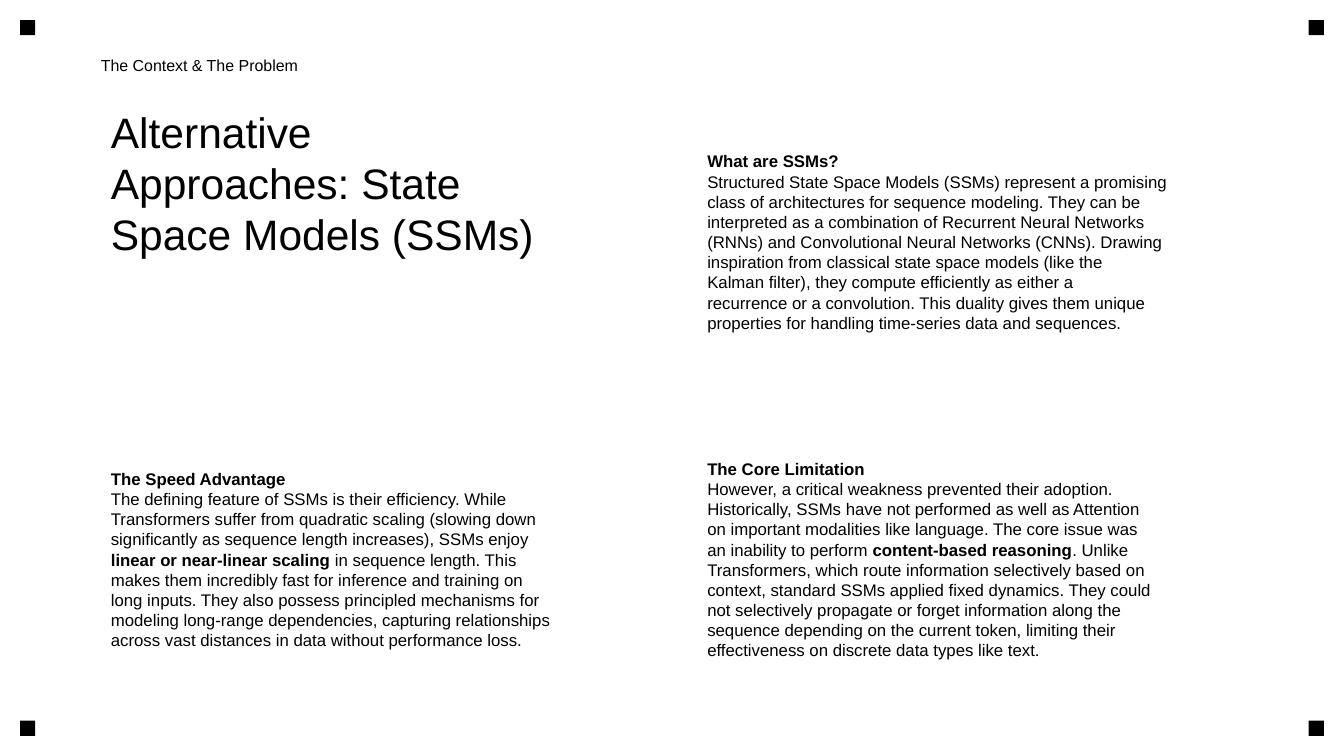
from dataclasses import dataclass
from itertools import product

import pptx
import pptx.dml.color
import pptx.enum.shapes
import pptx.enum.text
import pptx.util
from lxml import etree

Pt = pptx.util.Pt
Anchor = pptx.enum.text.MSO_ANCHOR


@dataclass(frozen=True)
class Theme:
    ink: str = "000000"
    paper: str = "FFFFFF"
    face: str = "Arial"
    title: float = 30.4
    body: float = 12
    label: float = 11.4
    lead: float = 1.2  # line pitch as a multiple of type size


@dataclass(frozen=True)
class Block:
    slot: int  # placeholder index
    col: int
    row: int
    head: str
    text: str  # asterisks surround bold words


THEME = Theme()
INK = pptx.dml.color.RGBColor.from_string(THEME.ink)

# Page and grid, in points
WIDE, HIGH = 960, 540
EDGE, MARK = 14.4, 10.8
LEFT, TOP = 72, 72
CELL_W, CELL_H = 390, 205.2
STEP_X, STEP_Y = 426, 226.8
INSETS = (7.2, 3.6, 3.6, 7.2)

LABEL = "The Context & The Problem"
TITLE = "Alternative\nApproaches: State\nSpace Models (SSMs)"
BLOCKS = [
    Block(2, 1, 0, "What are SSMs?", """\
Structured State Space Models (SSMs) represent a promising
class of architectures for sequence modeling. They can be
interpreted as a combination of Recurrent Neural Networks
(RNNs) and Convolutional Neural Networks (CNNs). Drawing
inspiration from classical state space models (like the
Kalman filter), they compute efficiently as either a
recurrence or a convolution. This duality gives them unique
properties for handling time-series data and sequences."""),
    Block(3, 0, 1, "The Speed Advantage", """\
The defining feature of SSMs is their efficiency. While
Transformers suffer from quadratic scaling (slowing down
significantly as sequence length increases), SSMs enjoy
*linear or near-linear scaling* in sequence length. This
makes them incredibly fast for inference and training on
long inputs. They also possess principled mechanisms for
modeling long-range dependencies, capturing relationships
across vast distances in data without performance loss."""),
    Block(4, 1, 1, "The Core Limitation", """\
However, a critical weakness prevented their adoption.
Historically, SSMs have not performed as well as Attention
on important modalities like language. The core issue was
an inability to perform *content-based reasoning*. Unlike
Transformers, which route information selectively based on
context, standard SSMs applied fixed dynamics. They could
not selectively propagate or forget information along the
sequence depending on the current token, limiting their
effectiveness on discrete data types like text."""),
]


def place(shape, box: tuple, insets: tuple, anchor):
    """Set a placeholder's box and return its text frame."""
    shape.left, shape.top, shape.width, shape.height = map(Pt, box)
    frame = shape.text_frame
    frame.word_wrap = True
    frame.auto_size = pptx.enum.text.MSO_AUTO_SIZE.NONE
    frame.vertical_anchor = anchor
    (frame.margin_left, frame.margin_top,
     frame.margin_right, frame.margin_bottom) = map(Pt, insets)
    return frame


def write(para, text: str, size: float, bold: bool = False) -> None:
    """Fill a plain paragraph, keeping line breaks and bold words."""
    props = para._p.get_or_add_pPr()
    props.set("marL", "0")
    props.set("indent", "0")
    etree.SubElement(props, pptx.oxml.ns.qn("a:buNone"))
    para.alignment = pptx.enum.text.PP_ALIGN.LEFT
    para.space_before = para.space_after = Pt(0)
    para.line_spacing = Pt(size * THEME.lead)
    font = para.font
    font.name, font.size, font.bold = THEME.face, Pt(size), bold
    font.color.rgb = INK
    for row, line in enumerate(text.split("\n")):
        if row:
            para.add_line_break()
        for part, words in enumerate(line.split("*")):
            if words:
                run = para.add_run()
                run.text = words
                if part % 2:
                    run.font.bold = True


def cell(col: int, row: int) -> tuple:
    return LEFT + col * STEP_X, TOP + row * STEP_Y, CELL_W, CELL_H


def main() -> None:
    deck = pptx.Presentation()
    deck.slide_width, deck.slide_height = Pt(WIDE), Pt(HIGH)
    slide = deck.slides.add_slide(deck.slide_layouts[4])
    slots = {item.placeholder_format.idx: item for item in slide.placeholders}
    fill = slide.background.fill
    fill.solid()
    fill.fore_color.rgb = pptx.dml.color.RGBColor.from_string(THEME.paper)

    # Corner marks
    for top, left in product((EDGE, HIGH - EDGE - MARK),
                             (EDGE, WIDE - EDGE - MARK)):
        mark = slide.shapes.add_shape(
            pptx.enum.shapes.MSO_SHAPE.RECTANGLE,
            Pt(left), Pt(top), Pt(MARK), Pt(MARK))
        mark.shadow.inherit = False
        mark.fill.solid()
        mark.fill.fore_color.rgb = INK
        mark.line.fill.background()

    # Title and section label
    frame = place(slots[0], cell(0, 0), INSETS, Anchor.TOP)
    write(frame.paragraphs[0], TITLE, THEME.title)
    frame = place(slots[1], (LEFT, 28.8, 432, 36), (0, 0, 0, 0), Anchor.MIDDLE)
    write(frame.paragraphs[0], LABEL, THEME.label)

    # Text blocks
    for block in BLOCKS:
        frame = place(slots[block.slot], cell(block.col, block.row),
                      INSETS, Anchor.MIDDLE)
        write(frame.paragraphs[0], block.head, THEME.body, bold=True)
        write(frame.add_paragraph(), block.text, THEME.body)

    deck.save("out.pptx")


if __name__ == "__main__":
    main()
